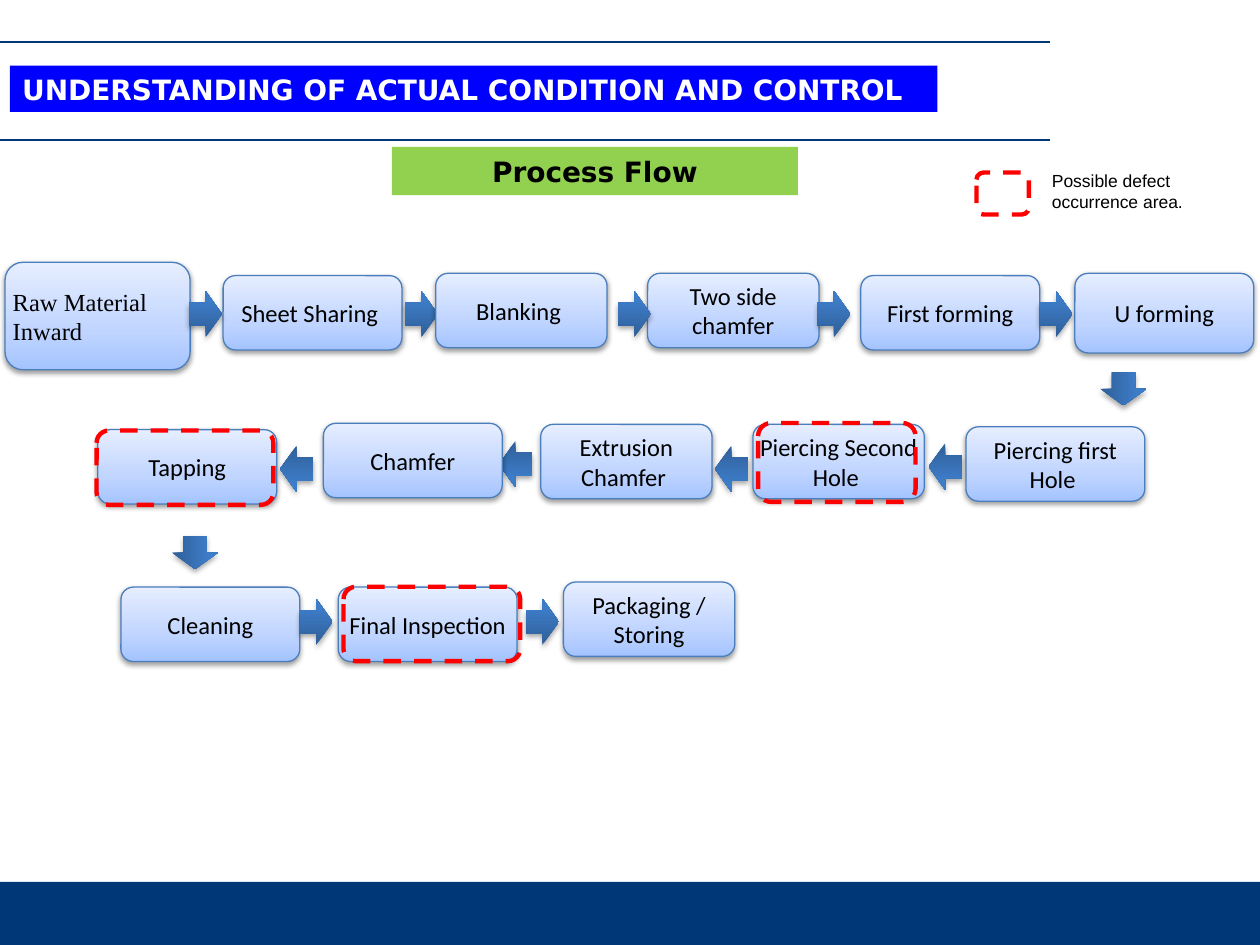
from lxml import etree
from pptx import Presentation
from pptx.dml.color import RGBColor
from pptx.enum import dml, shapes, text
from pptx.oxml import parse_xml
from pptx.oxml.ns import nsdecls, qn
from pptx.util import Pt

NAVY = RGBColor(0x00, 0x37, 0x77)
BLUE = RGBColor(0x00, 0x00, 0xFF)
GREEN = RGBColor(0x92, 0xD0, 0x50)
RED = RGBColor(0xFF, 0x00, 0x00)
BLACK = RGBColor(0x00, 0x00, 0x00)
WHITE = RGBColor(0xFF, 0xFF, 0xFF)
OUTLINE = RGBColor(0x4B, 0x7E, 0xBC)
STEP_STOPS = [(0, "A4C4FF"), (35, "BFD4FF"), (100, "E6EEFF")]
ARROW_STOPS = [(0, "2F5F99"), (80, "3D7CC7"), (100, "3A7CCB")]

# Content: step name, left, top, width, height
WIDE, NARROW, HIGH = 102.2, 97.9, 42.5
RAW_MATERIAL = "Raw Material Inward"
STEPS = [
    (RAW_MATERIAL, 2.9, 149.9, 105.8, 61.4),
    ("Sheet Sharing ", 127.5, 157.5, WIDE, HIGH),
    ("Blanking ", 249, 156.2, NARROW, HIGH),
    ("Two side chamfer", 370.1, 156.2, NARROW, HIGH),
    ("First forming", 491.9, 157.5, WIDE, HIGH),
    ("U forming", 614.2, 156.2, WIDE, 45.5),
    ("Piercing first Hole ", 552, 243.9, WIDE, HIGH),
    ("Piercing Second Hole ", 430.3, 242.5, NARROW, HIGH),
    ("Extrusion Chamfer ", 309, 242.5, NARROW, HIGH),
    ("Chamfer", 184.8, 241.9, WIDE, HIGH),
    ("Tapping", 55.9, 245.5, WIDE, HIGH),
    ("Cleaning", 69.1, 335.5, WIDE, HIGH),
    ("Final Inspection", 193.3, 335.5, WIDE, HIGH),
    ("Packaging / Storing", 322, 332.6, NARROW, HIGH),
]
IN_FRONT_OF_ARROWS = ("Blanking ", "Chamfer")

# Arrows: rotation, top, lefts
ARROW_SIZE = (18.9, 26.5)
ARROWS = [
    (0, 166.2, [108, 231.3, 353, 467.1, 594]),
    (90, 209, [632.5]),
    (180, 253.4, [530.6]),
    (180, 254.7, [408.5, 160]),
    (180, 252, [285.1]),
    (90, 302.5, [102]),
    (0, 342, [171.2, 300.5]),
]

# Dashed marks: legend key, then Tapping, Final Inspection, Piercing Second Hole
LEGEND_KEY = (558, 98.6, 30, 24)
DEFECT_AREAS = [(55.2, 246, 101, HIGH), (196.3, 335.3, 101, HIGH), (433.2, 241.7, 90, 45.1)]

prs = Presentation()
prs.slide_width, prs.slide_height = Pt(720), Pt(540)
slide = prs.slides.add_slide(prs.slide_layouts[6])


def add_block(kind, left, top, width, height, fill=None):
    block = slide.shapes.add_shape(kind, Pt(left), Pt(top), Pt(width), Pt(height))
    block.shadow.inherit = False
    block.line.fill.background()
    if fill is None:
        block.fill.background()
    else:
        block.fill.solid()
        block.fill.fore_color.rgb = fill
    return block


def write(block, words, size=14, font="Calibri", color=BLACK, bold=False,
          align=text.PP_ALIGN.CENTER, inset=None):
    frame = block.text_frame
    frame.word_wrap = True
    frame.vertical_anchor = text.MSO_ANCHOR.MIDDLE
    if inset is not None:
        frame.margin_left = frame.margin_right = Pt(inset)
        frame.margin_top = frame.margin_bottom = Pt(inset)
    paragraph = frame.paragraphs[0]
    paragraph.alignment = align
    run = paragraph.add_run()
    run.text = words
    run.font.size, run.font.name, run.font.bold = Pt(size), font, bold
    run.font.color.rgb = color


def shade(block, stops, opacity, drop):
    """Vertical gradient from the bottom up, with a soft shadow below."""
    props = block._element.spPr
    stop_xml = "".join(f'<a:gs pos="{pos * 1000}"><a:srgbClr val="{color}"/></a:gs>'
                       for pos, color in stops)
    gradient = parse_xml(f'<a:gradFill {nsdecls("a")} rotWithShape="1"><a:gsLst>{stop_xml}</a:gsLst>'
                         '<a:lin ang="16200000" scaled="0"/></a:gradFill>')
    props.replace(props.find(qn("a:noFill")), gradient)
    effects = props.find(qn("a:effectLst"))
    effects.append(parse_xml(
        f'<a:outerShdw {nsdecls("a")} blurRad="{Pt(3.1)}" dist="{Pt(drop)}" dir="5400000" '
        f'rotWithShape="0"><a:srgbClr val="000000"><a:alpha val="{opacity * 1000}"/>'
        '</a:srgbClr></a:outerShdw>'))


def add_step(name, *place):
    step = add_block(shapes.MSO_SHAPE.ROUNDED_RECTANGLE, *place)
    shade(step, STEP_STOPS, opacity=38, drop=1.6)
    step.line.color.rgb = OUTLINE
    step.line.width = Pt(0.75)
    if name == RAW_MATERIAL:
        write(step, name, font="Times New Roman", align=text.PP_ALIGN.LEFT, inset=1.44)
    else:
        write(step, name, inset=1.44)


def mark_defect(place):
    mark = add_block(shapes.MSO_SHAPE.ROUNDED_RECTANGLE, *place)
    mark.line.color.rgb = RED
    mark.line.width = Pt(2.5)
    mark.line.dash_style = dml.MSO_LINE.DASH


# Footer band and header rules
add_block(shapes.MSO_SHAPE.RECTANGLE, 0, 504, 720, 36, NAVY)
for y in (24, 80):
    rule = slide.shapes.add_connector(shapes.MSO_CONNECTOR.STRAIGHT, Pt(0), Pt(y), Pt(600), Pt(y))
    rule.line.color.rgb = NAVY
    rule.line.width = Pt(0.75)
    etree.SubElement(rule._element.spPr, qn("a:effectLst"))

# Headings and legend
mark_defect(LEGEND_KEY)
title = add_block(shapes.MSO_SHAPE.RECTANGLE, 5.6, 37.5, 530, 26.5, BLUE)
write(title, "UNDERSTANDING OF ACTUAL CONDITION AND CONTROL", size=16, font="DejaVu Sans",
      color=WHITE, bold=True, align=text.PP_ALIGN.LEFT)
subtitle = add_block(shapes.MSO_SHAPE.RECTANGLE, 224, 84, 232, 27.5, GREEN)
write(subtitle, "Process Flow", size=16, font="DejaVu Sans", bold=True)
legend = slide.shapes.add_textbox(Pt(594), Pt(93.6), Pt(96), Pt(31.7))
write(legend, "Possible defect occurrence area.", size=10, font="Arial", align=text.PP_ALIGN.LEFT)

# Process flow
for step in STEPS:
    if step[0] not in IN_FRONT_OF_ARROWS:
        add_step(*step)
for rotation, top, lefts in ARROWS:
    for left in lefts:
        arrow = add_block(shapes.MSO_SHAPE.RIGHT_ARROW, left, top, *ARROW_SIZE)
        arrow.rotation = rotation
        shade(arrow, ARROW_STOPS, opacity=35, drop=1.8)
for step in STEPS:
    if step[0] in IN_FRONT_OF_ARROWS:
        add_step(*step)
for area in DEFECT_AREAS:
    mark_defect(area)

prs.save("out.pptx")
